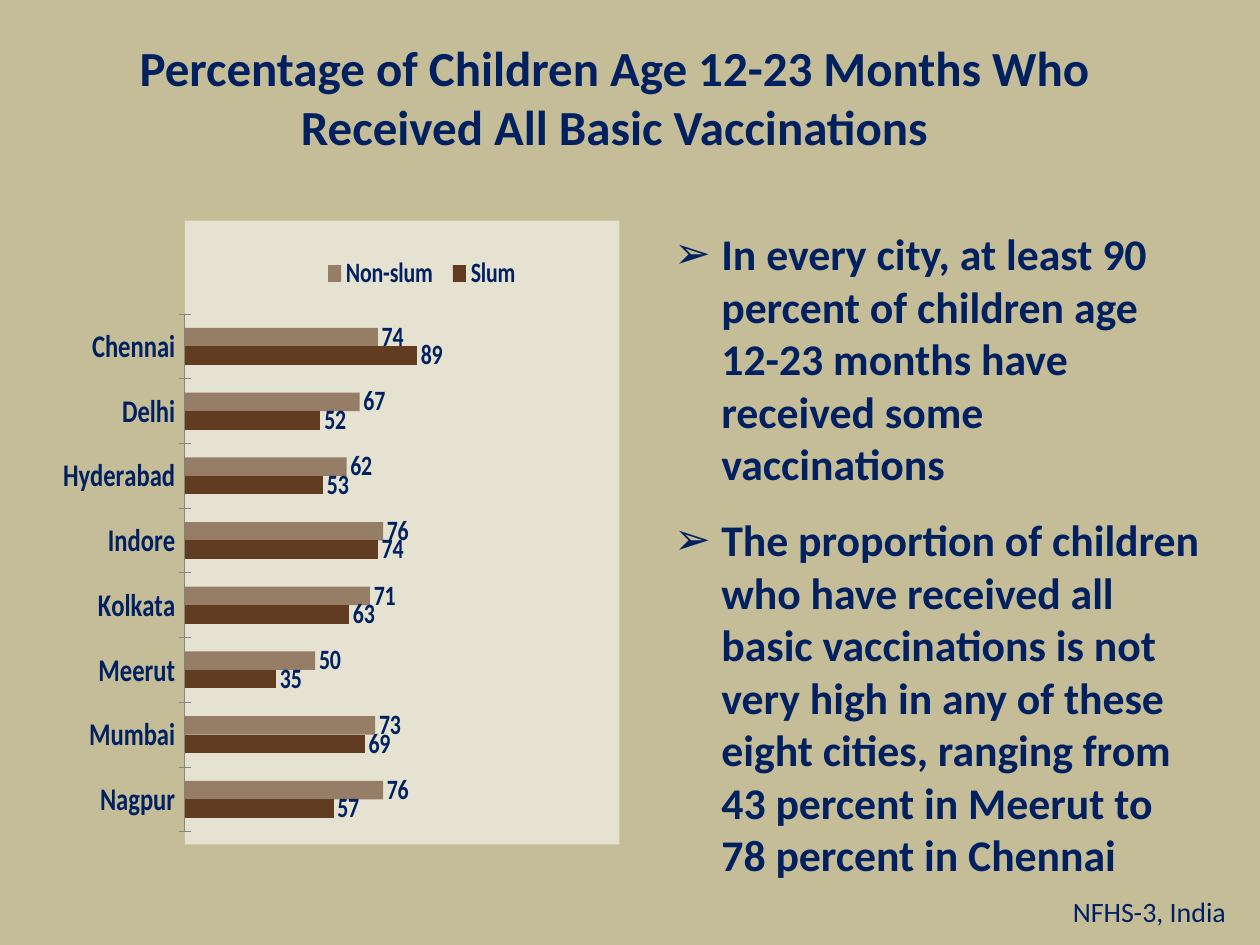
"""Build a slide on vaccination of children in eight Indian cities."""
from lxml import etree
from pptx import Presentation
from pptx.chart.data import CategoryChartData
from pptx.dml.color import RGBColor
from pptx.enum.chart import XL_CHART_TYPE, XL_LABEL_POSITION, XL_LEGEND_POSITION, XL_TICK_MARK
from pptx.enum.text import MSO_ANCHOR, MSO_AUTO_SIZE, PP_ALIGN
from pptx.oxml import parse_xml
from pptx.oxml.ns import nsdecls, qn
from pptx.util import Pt

BAR = XL_CHART_TYPE.BAR_CLUSTERED
OUTSIDE = XL_LABEL_POSITION.OUTSIDE_END
TOP = XL_LEGEND_POSITION.TOP
CROSS = XL_TICK_MARK.CROSS
NO_TICK = XL_TICK_MARK.NONE
NO_FIT = MSO_AUTO_SIZE.NONE
SAND = RGBColor(0xC4, 0xBD, 0x97)
CREAM = RGBColor(0xE5, 0xE2, 0xD1)
NAVY = RGBColor(0x00, 0x20, 0x60)
BROWN = RGBColor(0x62, 0x3C, 0x20)
GREY = RGBColor(0x86, 0x86, 0x86)

CITIES = ["Nagpur", "Mumbai", "Meerut", "Kolkata", "Indore", "Hyderabad", "Delhi", "Chennai"]
RATES = {
    "Slum": [57, 69, 35, 63, 74, 53, 52, 89],
    "Non-slum": [76, 73, 50, 71, 76, 62, 67, 74],
}
POINTS = [
    ("In every city, at least 90 percent of children age 12-23 months have "
     "received some vaccinations", 5),
    ("The proportion of children who have received all basic vaccinations is not "
     "very high in any of these eight cities, ranging from 43 percent in Meerut to "
     "78 percent in Chennai", 13.5),
]


def style(font, size, bold=True):
    font.name = "Calibri"
    font.size = Pt(size)
    font.bold = bold
    font.color.rgb = NAVY


def layout(x, y, wide, high, target=""):
    return parse_xml(
        f'<c:layout {nsdecls("c")}><c:manualLayout>{target}'
        '<c:xMode val="edge"/><c:yMode val="edge"/>'
        f'<c:x val="{x}"/><c:y val="{y}"/><c:w val="{wide}"/><c:h val="{high}"/>'
        '</c:manualLayout></c:layout>')


prs = Presentation()
prs.slide_width, prs.slide_height = Pt(720), Pt(540)
slide = prs.slides.add_slide(prs.slide_layouts[1])
slide.background.fill.solid()
slide.background.fill.fore_color.rgb = SAND

title = slide.shapes.title
title.left, title.top, title.width, title.height = Pt(60), Pt(18), Pt(582), Pt(75)
title.text_frame.auto_size = NO_FIT
title.text_frame.vertical_anchor = MSO_ANCHOR.TOP
head = title.text_frame.paragraphs[0]
head.text = "Percentage of Children Age 12-23 Months Who Received All Basic Vaccinations"
head.alignment = PP_ALIGN.CENTER
style(head.font, 28)

data = CategoryChartData(number_format="0")
data.categories = CITIES
for name, rates in RATES.items():
    data.add_series(name, rates)
chart = slide.shapes.add_chart(BAR, Pt(36), Pt(126), Pt(318), Pt(356.5), data).chart
chart.has_title = False
style(chart.font, 18)
chart._chartSpace.chart.addnext(parse_xml(
    f'<c:spPr {nsdecls("c", "a")}><a:solidFill><a:srgbClr val="{CREAM}"/></a:solidFill>'
    '<a:ln><a:noFill/></a:ln></c:spPr>'))

plot = chart.plots[0]
plot.gap_width, plot.overlap = 150, 0
plot.vary_by_categories = False
area = chart._chartSpace.chart.plotArea
for old in area.findall(qn("c:layout")):
    area.remove(old)
area.insert(0, layout(0, 0.15, 0.6, 0.83, '<c:layoutTarget val="inner"/>'))

axis = chart.category_axis
axis.major_tick_mark, axis.minor_tick_mark = CROSS, NO_TICK
axis.format.line.color.rgb = GREY
style(axis.tick_labels.font, 18)
scale = chart.value_axis
scale.minimum_scale, scale.maximum_scale = 0, 100
scale.has_major_gridlines = False
scale.visible = False

for bars in plot.series:
    bars.invert_if_negative = False
    bars.format.fill.solid()
    bars.format.fill.fore_color.rgb = BROWN
    labels = bars.data_labels
    labels.show_value = True
    labels.number_format, labels.number_format_is_linked = "0", False
    labels.position = OUTSIDE
    style(labels.font, 16)
tint = plot.series[1]._element.find(".//" + qn("a:srgbClr"))
etree.SubElement(tint, qn("a:alpha"), val="60000")

chart.has_legend = True
legend = chart.legend
legend.position = TOP
legend.include_in_layout = False
style(legend.font, 16)
for old in legend._element.findall(qn("c:layout")):
    legend._element.remove(old)
legend._element.find(qn("c:legendPos")).addnext(layout(0.3, 0.04, 0.49, 0.09))

body = slide.placeholders[1]
body.left, body.top, body.width, body.height = Pt(378), Pt(126), Pt(318), Pt(384)
frame = body.text_frame
frame.auto_size = NO_FIT
for i, (words, gap) in enumerate(POINTS):
    para = frame.add_paragraph() if i else frame.paragraphs[0]
    para.text = words
    para.space_before = Pt(gap)
    style(para.font, 25)
    props = para._p.get_or_add_pPr()
    props.set("marL", str(Pt(27)))
    props.set("indent", str(Pt(-27)))
    mark = etree.Element(qn("a:buClr"))
    etree.SubElement(mark, qn("a:srgbClr"), val=str(NAVY))
    props.find(qn("a:spcBef")).addnext(mark)
    sign = etree.Element(qn("a:buChar"), char="➢")
    mark.addnext(sign)

note = slide.shapes.add_textbox(Pt(606), Pt(507.5), Pt(114), Pt(26.5)).text_frame
note.word_wrap = True
note.paragraphs[0].text = "NFHS-3, India"
style(note.paragraphs[0].font, 16, False)

prs.save("out.pptx")
